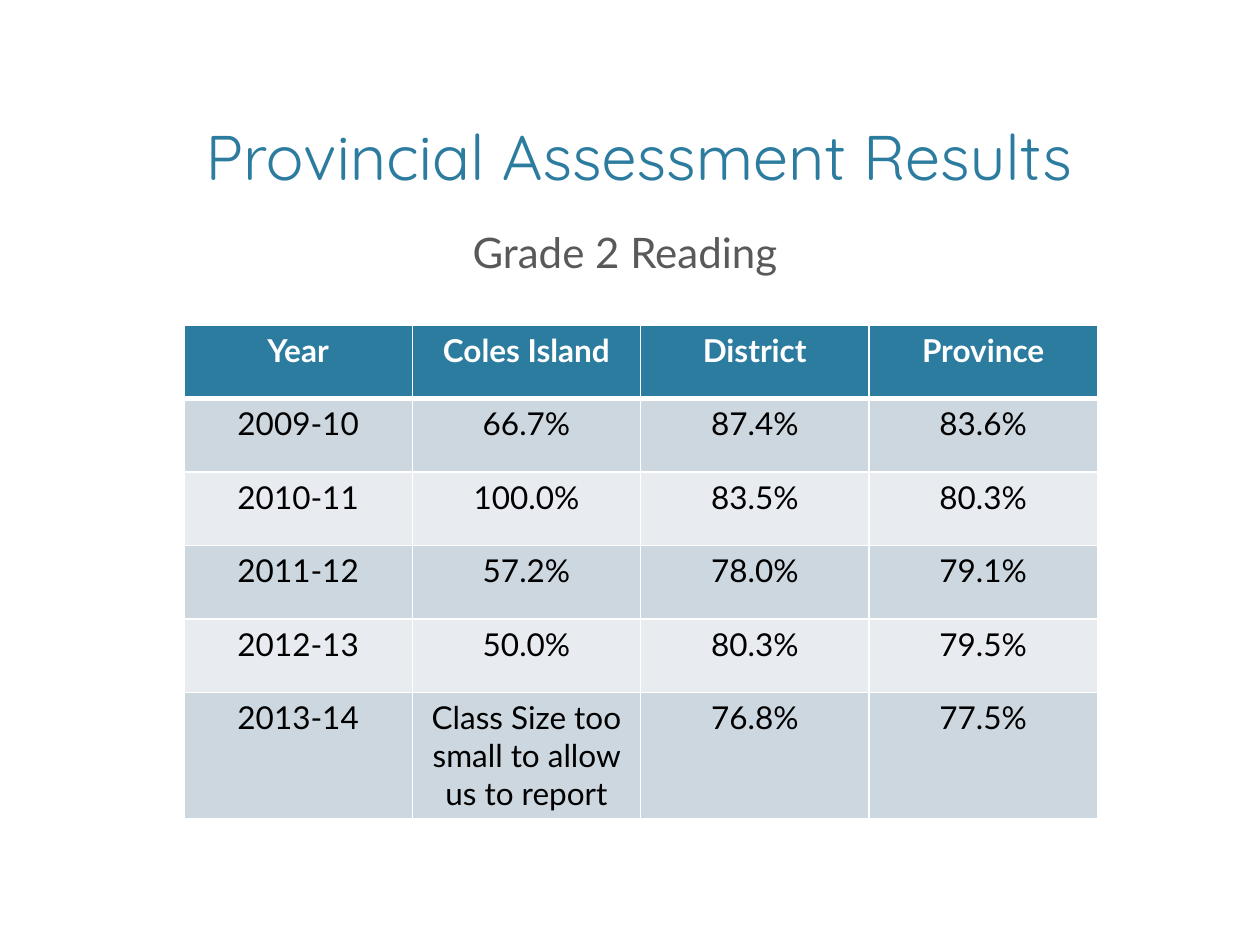
from dataclasses import dataclass

from lxml import etree
from pptx import Presentation
from pptx.dml.color import RGBColor
from pptx.enum.text import MSO_ANCHOR, PP_ALIGN
from pptx.oxml.ns import qn
from pptx.util import Inches, Pt

CENTER = PP_ALIGN.CENTER
TOP = MSO_ANCHOR.TOP
BOTTOM = MSO_ANCHOR.BOTTOM

TEAL = RGBColor(0x2C, 0x7C, 0x9F)
GRAY = RGBColor(0x59, 0x59, 0x59)
WHITE = RGBColor(0xFF, 0xFF, 0xFF)
BLACK = RGBColor(0x00, 0x00, 0x00)
DARK_BAND = RGBColor(0xCD, 0xD7, 0xDF)
LIGHT_BAND = RGBColor(0xE8, 0xEC, 0xF0)

RESULTS = (
    ("Year", "Coles Island", "District", "Province"),
    ("2009-10", "66.7%", "87.4%", "83.6%"),
    ("2010-11", "100.0%", "83.5%", "80.3%"),
    ("2011-12", "57.2%", "78.0%", "79.1%"),
    ("2012-13", "50.0%", "80.3%", "79.5%"),
    ("2013-14", "Class Size too small to allow us to report", "76.8%", "77.5%"),
)


@dataclass(frozen=True)
class TextStyle:
    font: str
    size: float
    color: RGBColor
    bold: bool = False


@dataclass(frozen=True)
class Heading:
    text: str
    top: float
    height: float
    anchor: MSO_ANCHOR
    style: TextStyle
    left_margin: float = 0.1
    right_margin: float = 0.1


HEADINGS = (
    Heading("Provincial Assessment Results", 0.55, 1.03, BOTTOM,
            TextStyle("Quicksand", 36, TEAL), left_margin=0.24),
    Heading("Grade 2 Reading", 1.75, 4.75, TOP,
            TextStyle("Lato", 24, GRAY), right_margin=0.18),
)
HEADER_STYLE = TextStyle("Lato", 18, WHITE, bold=True)
BODY_STYLE = TextStyle("Lato", 18, BLACK)


def write_text(text_frame, text: str, style: TextStyle) -> None:
    paragraph = text_frame.paragraphs[0]
    paragraph.text = text
    paragraph.alignment = CENTER
    paragraph.font.name = style.font
    paragraph.font.size = Pt(style.size)
    paragraph.font.bold = style.bold
    paragraph.font.color.rgb = style.color


def add_heading(slide, heading: Heading) -> None:
    shape = slide.shapes.add_textbox(
        Inches(0.6), Inches(heading.top), Inches(8.8), Inches(heading.height))
    text_frame = shape.text_frame
    text_frame.word_wrap = True
    text_frame.vertical_anchor = heading.anchor
    text_frame.margin_left = Inches(heading.left_margin)
    text_frame.margin_right = Inches(heading.right_margin)
    write_text(text_frame, heading.text, heading.style)


def set_borders(cell, bottom_width: float) -> None:
    properties = cell._tc.get_or_add_tcPr()
    widths = {"a:lnL": 1, "a:lnR": 1, "a:lnT": 1, "a:lnB": bottom_width}
    for position, (tag, width) in enumerate(widths.items()):
        line = etree.Element(qn(tag), w=str(Pt(width)))
        fill = etree.SubElement(line, qn("a:solidFill"))
        etree.SubElement(fill, qn("a:srgbClr"), val=str(WHITE))
        properties.insert(position, line)


def fill_cell(cell, text: str, row_index: int) -> None:
    is_header = row_index == 0
    band = DARK_BAND if row_index % 2 else LIGHT_BAND
    cell.fill.solid()
    cell.fill.fore_color.rgb = TEAL if is_header else band
    write_text(cell.text_frame, text, HEADER_STYLE if is_header else BODY_STYLE)
    set_borders(cell, 3 if is_header else 1)


def add_results_table(slide) -> None:
    table = slide.shapes.add_table(
        len(RESULTS), len(RESULTS[0]),
        Inches(1.46), Inches(2.58), Inches(7.25), Inches(3.5)).table
    for row_index, row in enumerate(RESULTS):
        for column_index, text in enumerate(row):
            fill_cell(table.cell(row_index, column_index), text, row_index)


def main() -> None:
    presentation = Presentation()
    presentation.slide_width = Inches(10)
    presentation.slide_height = Inches(7.5)
    slide = presentation.slides.add_slide(presentation.slide_layouts[6])
    for heading in HEADINGS:
        add_heading(slide, heading)
    add_results_table(slide)
    presentation.save("out.pptx")


if __name__ == "__main__":
    main()
